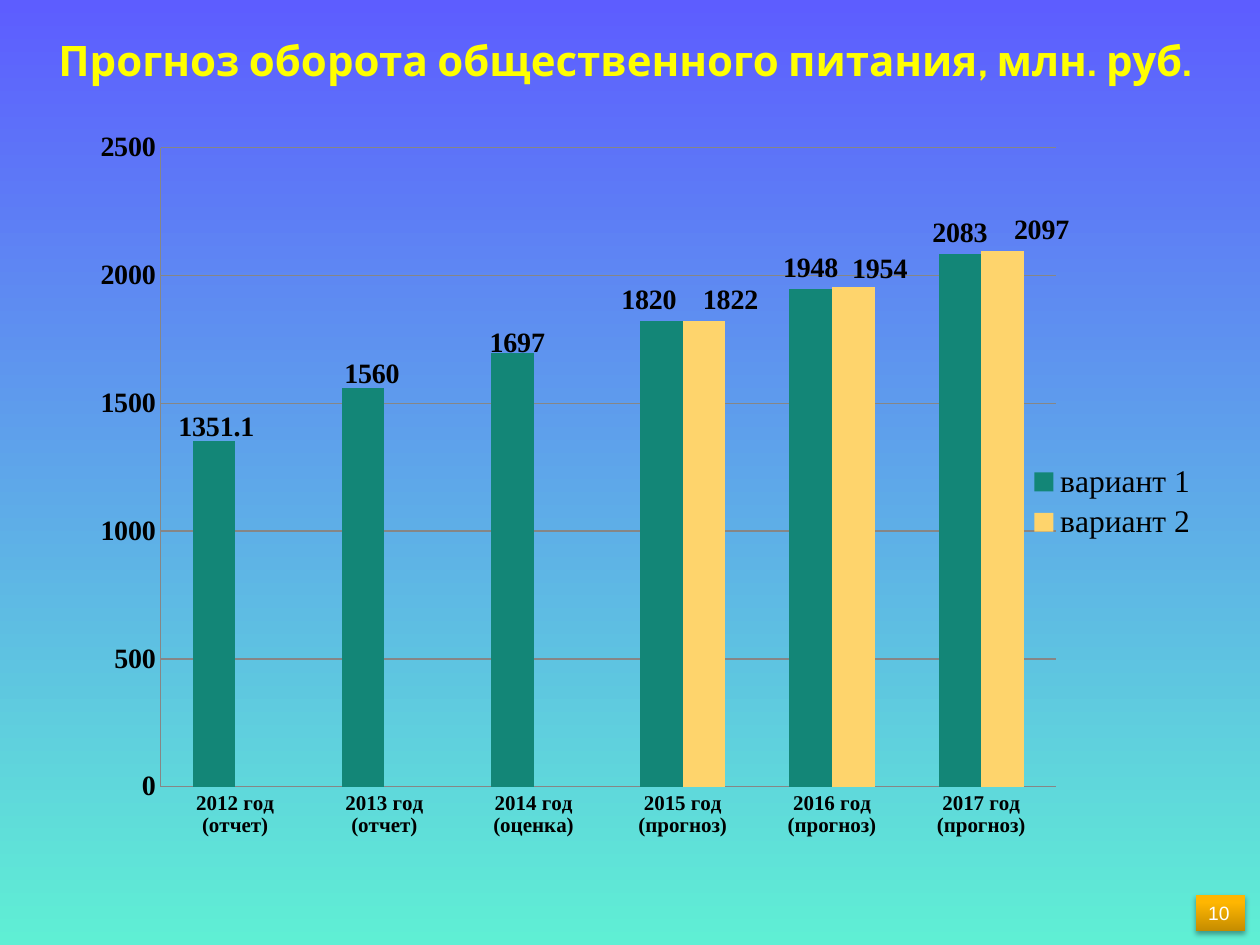
from dataclasses import dataclass

from lxml import etree
from pptx import Presentation
from pptx.chart.data import CategoryChartData
from pptx.dml.color import RGBColor
from pptx.enum.chart import (XL_CHART_TYPE, XL_LABEL_POSITION,
                             XL_LEGEND_POSITION, XL_TICK_MARK)
from pptx.enum.shapes import MSO_SHAPE
from pptx.enum.text import MSO_ANCHOR, PP_ALIGN
from pptx.oxml import parse_xml
from pptx.oxml.ns import nsdecls, qn
from pptx.util import Inches, Pt

COLUMNS = XL_CHART_TYPE.COLUMN_CLUSTERED
OUTSIDE_END = XL_LABEL_POSITION.OUTSIDE_END
LEGEND_RIGHT = XL_LEGEND_POSITION.RIGHT
NO_TICK = XL_TICK_MARK.NONE
RECTANGLE = MSO_SHAPE.RECTANGLE
MIDDLE, CENTER, LEFT = MSO_ANCHOR.MIDDLE, PP_ALIGN.CENTER, PP_ALIGN.LEFT


@dataclass(frozen=True)
class Theme:
    background: tuple = ((0, "5D5DFF"), (1, "5FEFD4"))
    badge: tuple = ((0, "C58C00"), (0.8, "FFB601"))
    title: str = "FFFF00"
    text: str = "000000"
    light: str = "FFFFFF"
    grid: str = "868686"
    series: tuple = ("138677", "FED46C")
    title_font: str = "Cabin"
    chart_font: str = "Times New Roman"
    base_font: str = "Arial"
    title_size: int = 24
    legend_size: int = 18
    value_size: int = 16
    category_size: int = 12
    badge_size: int = 11


CATEGORIES = ("2012 год (отчет)", "2013 год (отчет)", "2014 год (оценка)",
              "2015 год (прогноз)", "2016 год (прогноз)", "2017 год (прогноз)")
TURNOVER = {
    "вариант 1": (1351.1, 1560, 1697, 1820, 1948, 2083),
    "вариант 2": (None, None, None, 1822, 1954, 2097),
}
# Label shifts in inches, by series and point
LABEL_SHIFTS = {
    "вариант 1": {0: (0.02, 0.05), 1: (0.07, 0.06), 2: (0.04, 0.09), 3: (-0.1, 0)},
    "вариант 2": {3: (0.21, 0), 4: (0.21, 0.02), 5: (0.31, 0)},
}


def manual_layout(**values):
    layout = etree.Element(qn("c:layout"))
    manual = etree.SubElement(layout, qn("c:manualLayout"))
    for name, value in values.items():
        etree.SubElement(manual, qn(f"c:{name}")).set("val", str(value))
    return layout


class SlideBuilder:
    def __init__(self, slide, theme):
        self.slide = slide
        self.theme = theme

    def style(self, font, size, color, name, bold=False):
        font.size, font.name, font.bold = Pt(size), name, bold
        font.color.rgb = RGBColor.from_string(color)

    def gradient(self, fill, stops, angle):
        fill.gradient()
        fill.gradient_angle = angle
        for stop, (position, color) in zip(fill.gradient_stops, stops):
            stop.position = position
            stop.color.rgb = RGBColor.from_string(color)

    def background(self):
        self.gradient(self.slide.background.fill, self.theme.background, 270)

    def title(self, text, box):
        t = self.theme
        tf = self.slide.shapes.add_textbox(*map(Inches, box)).text_frame
        tf.word_wrap = True
        tf.vertical_anchor = MIDDLE
        p = tf.paragraphs[0]
        p.text, p.alignment = text, CENTER
        self.style(p.font, t.title_size, t.title, t.title_font, True)

    def badge(self, text, box):
        t = self.theme
        sp = self.slide.shapes.add_shape(RECTANGLE, *map(Inches, box))
        self.gradient(sp.fill, t.badge, 90)
        sp.line.fill.background()
        sp.shadow.inherit = False
        effects = sp.element.spPr.find(qn("a:effectLst"))
        effects.append(parse_xml(
            f'<a:outerShdw {nsdecls("a")} blurRad="{Pt(3.1)}" dist="{Pt(1.8)}" '
            'dir="5400000" rotWithShape="0"><a:srgbClr val="000000">'
            '<a:alpha val="35000"/></a:srgbClr></a:outerShdw>'))
        p = sp.text_frame.paragraphs[0]
        p.text, p.alignment = text, LEFT
        self.style(p.font, t.badge_size, t.light, t.base_font)

    def column_chart(self, categories, series, shifts, box, plot_box):
        t = self.theme
        data = CategoryChartData()
        data.categories = categories
        for name, values in series.items():
            data.add_series(name, values)
        chart = self.slide.shapes.add_chart(COLUMNS, *map(Inches, box), data).chart
        chart.has_title = False
        self.style(chart.font, t.legend_size, t.text, t.base_font)

        # Plot area
        plot = chart.plots[0]
        plot.gap_width, plot.overlap, plot.vary_by_categories = 150, 0, False
        area = chart.element.find(".//" + qn("c:plotArea"))
        for old in area.findall(qn("c:layout")):
            area.remove(old)
        x, y, w, h = plot_box
        area.insert(0, manual_layout(layoutTarget="inner", xMode="edge",
                                     yMode="edge", x=x, y=y, w=w, h=h))

        # Axes
        values = chart.value_axis
        values.minimum_scale, values.maximum_scale, values.major_unit = 0, 2500, 500
        values.has_major_gridlines = True
        grid = RGBColor.from_string(t.grid)
        values.major_gridlines.format.line.color.rgb = grid
        for axis, size in ((chart.category_axis, t.category_size),
                           (values, t.value_size)):
            axis.major_tick_mark = axis.minor_tick_mark = NO_TICK
            axis.format.line.color.rgb = grid
            self.style(axis.tick_labels.font, size, t.text, t.chart_font, True)

        # Legend
        chart.has_legend = True
        chart.legend.position = LEGEND_RIGHT
        chart.legend.include_in_layout = False
        self.style(chart.legend.font, t.legend_size, t.text, t.chart_font)

        # Series and their labels
        for ser, color in zip(plot.series, t.series):
            ser.format.fill.solid()
            ser.format.fill.fore_color.rgb = RGBColor.from_string(color)
            self.series_labels(ser, shifts[ser.name], box)

    def series_labels(self, ser, shifts, box):
        t = self.theme
        ser.data_labels.show_value = True
        points = [ser.points[i].data_label for i in shifts]
        for labels in (ser.data_labels, *points):
            labels.position = OUTSIDE_END
            self.style(labels.font, t.value_size, t.text, t.chart_font, True)
        nodes = ser.data_labels._element.findall(qn("c:dLbl"))
        for node, (dx, dy) in zip(nodes, shifts.values()):
            node.insert(1, manual_layout(x=dx / box[2], y=dy / box[3]))


def main():
    prs = Presentation()
    prs.slide_width, prs.slide_height = Inches(10), Inches(7.5)
    s = SlideBuilder(prs.slides.add_slide(prs.slide_layouts[6]), Theme())
    s.background()
    s.title("Прогноз оборота общественного питания, млн. руб.",
            (0.16, 0.16, 9.61, 0.63))
    s.column_chart(CATEGORIES, TURNOVER, LABEL_SHIFTS,
                   (0.5, 0.94, 9.11, 6.09), (0.085, 0.038, 0.78, 0.833))
    s.badge("10", (9.49, 7.1, 0.39, 0.29))
    prs.save("out.pptx")


if __name__ == "__main__":
    main()
